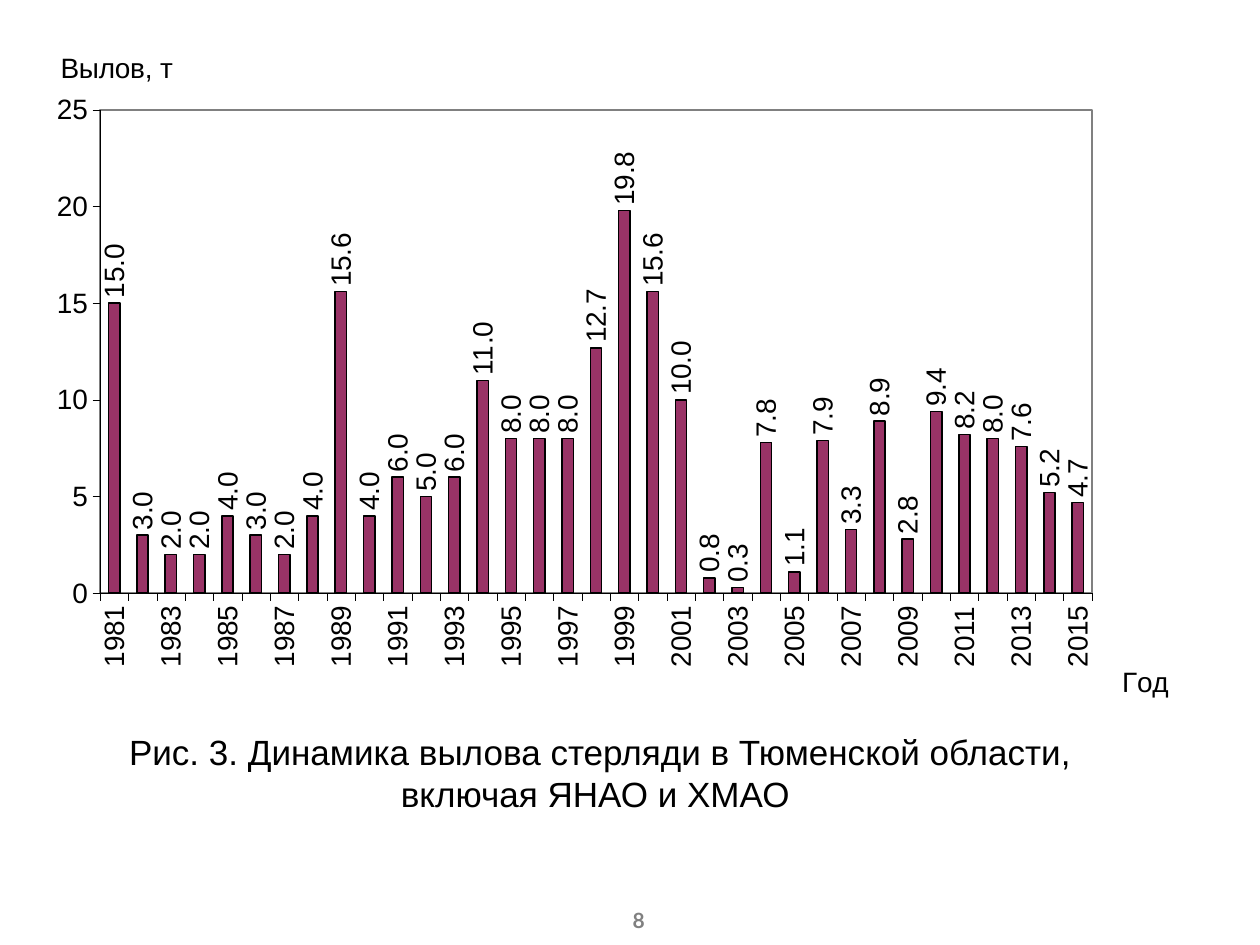
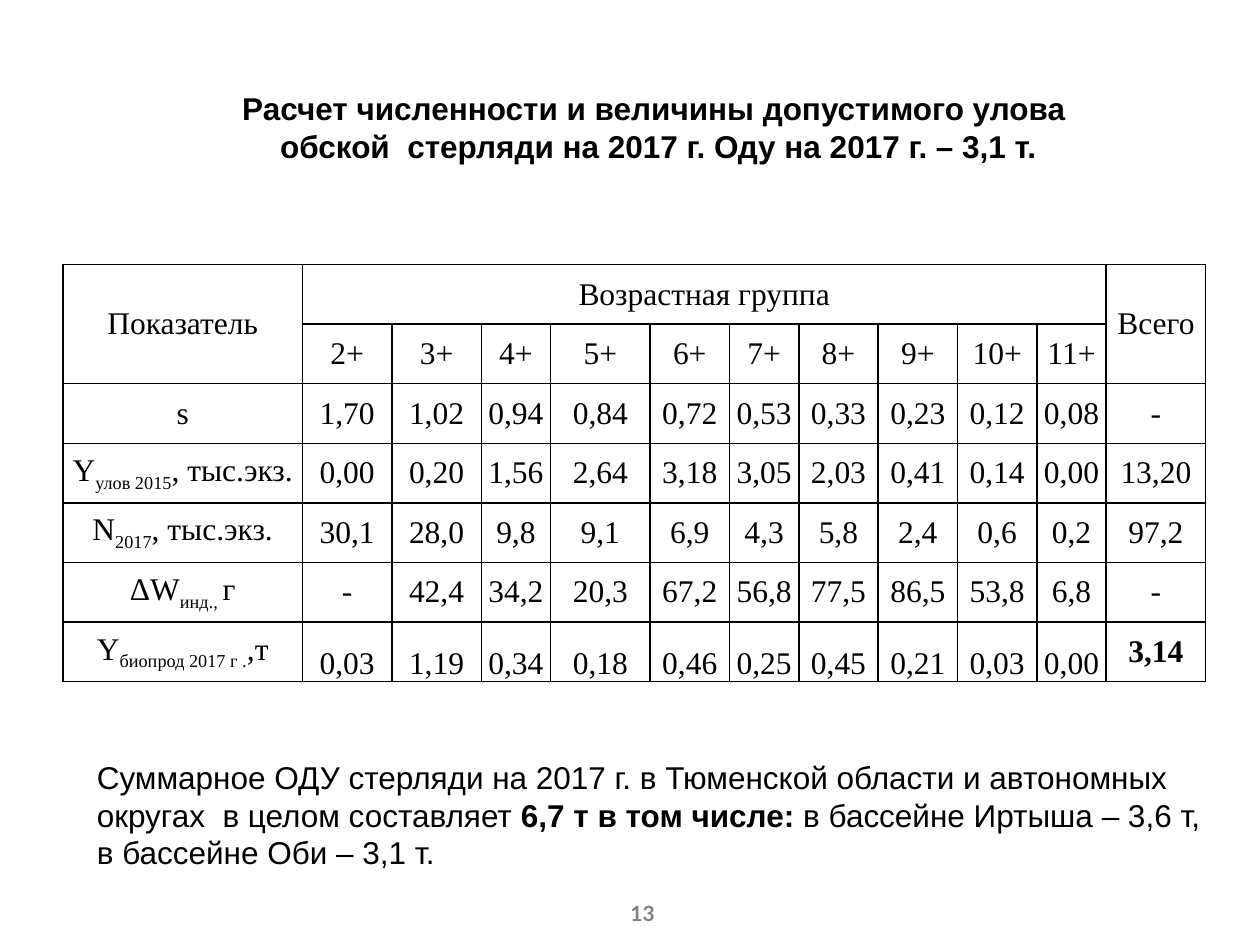
from lxml import etree
from pptx import Presentation
from pptx.chart.data import CategoryChartData
from pptx.dml.color import RGBColor
from pptx.enum.chart import XL_CHART_TYPE, XL_LABEL_POSITION, XL_TICK_MARK
from pptx.enum.text import MSO_ANCHOR, PP_ALIGN
from pptx.oxml import parse_xml
from pptx.oxml.ns import nsdecls, qn
from pptx.util import Inches, Pt

COLUMN = XL_CHART_TYPE.COLUMN_CLUSTERED
OUTSIDE = XL_LABEL_POSITION.OUTSIDE_END
TICK_OUT = XL_TICK_MARK.OUTSIDE
TICK_NONE = XL_TICK_MARK.NONE
MIDDLE, BOTTOM = MSO_ANCHOR.MIDDLE, MSO_ANCHOR.BOTTOM
LEFT, CENTER = PP_ALIGN.LEFT, PP_ALIGN.CENTER

COLORS = {"ink": "000000", "gray": "808080", "bar": "993366", "paper": "FFFFFF"}
SANS, SERIF, PAGE = "Arial", "Times New Roman", "Lato"

FIRST = 1981
CATCH = [15, 3, 2, 2, 4, 3, 2, 4, 15.6, 4, 6, 5, 6, 11, 8, 8, 8, 12.7,
         19.8, 15.6, 10, 0.8, 0.3, 7.8, 1.1, 7.9, 3.3, 8.9, 2.8, 9.4,
         8.2, 8, 7.6, 5.2, 4.7]

WIDTHS = [1.9, 0.71, 0.71, 0.55, 0.79, 0.63, 0.55, 0.63, 0.63, 0.63, 0.55, 0.79]
HEIGHT = 3.31
AGES = [f"{age}+" for age in range(2, 12)]
# Each row: label runs, then values by age and the total
ROWS = [
    (["s"], "1,70 1,02 0,94 0,84 0,72 0,53 0,33 0,23 0,12 0,08 -"),
    (["Y", ("улов 2015", "sub"), ", тыс.экз."],
     "0,00 0,20 1,56 2,64 3,18 3,05 2,03 0,41 0,14 0,00 13,20"),
    (["N", ("2017", "sub"), ", тыс.экз."],
     "30,1 28,0 9,8 9,1 6,9 4,3 5,8 2,4 0,6 0,2 97,2"),
    (["ΔW", ("инд., ", "sub"), "г"],
     "- 42,4 34,2 20,3 67,2 56,8 77,5 86,5 53,8 6,8 -"),
    (["Y", ("биопрод 2017 г .", "sub"), ",т"],
     "0,03 1,19 0,34 0,18 0,46 0,25 0,45 0,21 0,03 0,00 3,14"),
]


def rgb(name):
    return RGBColor.from_string(COLORS[name])


def write(frame, *paras, size=18, font=SANS, color="ink", bold=False, align=CENTER):
    """Fill a frame; a paragraph is a list of strings or (string, style) pairs."""
    for i, runs in enumerate(paras):
        para = frame.add_paragraph() if i else frame.paragraphs[0]
        para.alignment = align
        for part in runs:
            text, style = (part, "") if isinstance(part, str) else part
            run = para.add_run()
            run.text = text
            run.font.size, run.font.name = Pt(size), font
            run.font.bold = bold or style == "bold"
            run.font.color.rgb = rgb(color)
            if style == "sub":
                run.font._element.set("baseline", "-25000")


def set_box(shape, box):
    shape.left, shape.top, shape.width, shape.height = map(Inches, box)
    shape.text_frame.word_wrap = True
    shape.text_frame.vertical_anchor = MIDDLE


def add_title(slide, box, *paras, **style):
    set_box(slide.shapes.title, box)
    write(slide.shapes.title.text_frame, *paras, **style)


def add_text(slide, box, *paras, **style):
    shape = slide.shapes.add_textbox(*map(Inches, box))
    set_box(shape, box)
    write(shape.text_frame, *paras, **style)


def add_page(slide, left, top, number):
    add_text(slide, (left, top, 2, 0.4), [number],
             size=12, font=PAGE, color="gray", bold=True)


# Chart parts
def place(node, index, inner=False, **spots):
    """Give a chart part a manual layout in fractions of the chart."""
    for old in node.findall(qn("c:layout")):
        node.remove(old)
    layout = etree.Element(qn("c:layout"))
    manual = etree.SubElement(layout, qn("c:manualLayout"))
    items = [("layoutTarget", "inner")] if inner else []
    items += [("xMode", "edge"), ("yMode", "edge"), *spots.items()]
    for tag, value in items:
        etree.SubElement(manual, qn(f"c:{tag}")).set("val", str(value))
    node.insert(index, layout)


def turn(holder, angle):
    body = next(holder.iter(qn("a:bodyPr")))
    body.set("rot", str(angle * 60000))
    body.set("vert", "horz")


def set_axis(axis, title, x, y):
    axis.has_major_gridlines = False
    axis.major_tick_mark, axis.minor_tick_mark = TICK_OUT, TICK_NONE
    axis.format.line.color.rgb = rgb("ink")
    axis.format.line.width = Pt(0.23)
    axis.tick_labels.font.size = Pt(16)
    write(axis.axis_title.text_frame, [title], size=16)
    node = axis.axis_title._element
    turn(node, 0)
    place(node, 1, x=x, y=y)


def add_catch(slide, box):
    data = CategoryChartData(number_format="#,##0.0")
    data.categories = [str(FIRST + i) for i in range(len(CATCH))]
    data.add_series("Вылов, т", CATCH)
    chart = slide.shapes.add_chart(COLUMN, *map(Inches, box), data).chart
    chart.has_legend = chart.has_title = False
    chart.font.size, chart.font.name = Pt(16), SANS
    chart.font.color.rgb = rgb("ink")

    # Axes
    years, tons = chart.category_axis, chart.value_axis
    set_axis(years, "Год", 0.94, 0.9)
    set_axis(tons, "Вылов, т", 0.01, 0)
    tons.minimum_scale, tons.maximum_scale, tons.major_unit = 0, 25, 5
    tons.tick_labels.number_format = "0"
    tons.tick_labels.number_format_is_linked = False
    turn(years._element.find(qn("c:txPr")), -90)
    skip = etree.Element(qn("c:tickLblSkip"), val="2")
    years._element.find(qn("c:noMultiLvlLbl")).addprevious(skip)

    # Bars and labels
    plot = chart.plots[0]
    plot.gap_width, plot.vary_by_categories = 150, False
    bars = plot.series[0].format
    bars.fill.solid()
    bars.fill.fore_color.rgb = rgb("bar")
    bars.line.color.rgb = rgb("ink")
    bars.line.width = Pt(0.9)
    plot.has_data_labels = True
    labels = plot.data_labels
    labels.show_value, labels.position = True, OUTSIDE
    labels.number_format, labels.number_format_is_linked = "#,##0.0", False
    labels.font.size = Pt(16)
    turn(labels._element, -90)

    # Plot frame
    area = next(chart._chartSpace.iter(qn("c:plotArea")))
    place(area, 0, inner=True, x=0.049, y=0.095, w=0.869, h=0.709)
    area.append(parse_xml(
        f'<c:spPr {nsdecls("c", "a")}><a:noFill/><a:ln w="12700"><a:solidFill>'
        f'<a:srgbClr val="{COLORS["gray"]}"/></a:solidFill></a:ln></c:spPr>'))


# Table parts
def set_cell(cell, runs, anchor=MIDDLE, bold=False):
    cell.margin_left = cell.margin_right = Inches(0.02)
    cell.margin_top = cell.margin_bottom = 0
    cell.vertical_anchor = anchor
    cell.fill.solid()
    cell.fill.fore_color.rgb = rgb("paper")
    for i, side in enumerate("LRTB"):
        cell._tc.tcPr.insert(i, parse_xml(
            f'<a:ln{side} {nsdecls("a")} w="12700"><a:solidFill>'
            f'<a:srgbClr val="{COLORS["ink"]}"/></a:solidFill></a:ln{side}>'))
    if runs:
        write(cell.text_frame, runs, font=SERIF, bold=bold)


def add_stock(slide, left, top):
    count, last = len(ROWS) + 2, len(WIDTHS) - 1
    table = slide.shapes.add_table(
        count, len(WIDTHS), Inches(left), Inches(top),
        Inches(sum(WIDTHS)), Inches(HEIGHT)).table
    table.first_row = table.horz_banding = False
    for col, width in zip(table.columns, WIDTHS):
        col.width = Inches(width)
    for row in table.rows:
        row.height = Inches(HEIGHT / count)

    # Header spans, then one row per measure
    for start, end in [((0, 0), (1, 0)), ((0, 1), (0, last - 1)), ((0, last), (1, last))]:
        table.cell(*start).merge(table.cell(*end))
    top_row = [["Показатель"], ["Возрастная группа"], *[[]] * (last - 2), ["Всего"]]
    grid = [top_row, [[], *[[age] for age in AGES], []]]
    grid += [[label, *[[value] for value in values.split()]] for label, values in ROWS]
    for r, line in enumerate(grid):
        for c, runs in enumerate(line):
            final = r == count - 1
            low = final and 0 < c < last
            set_cell(table.cell(r, c), runs, BOTTOM if low else MIDDLE,
                     bold=final and c == last)


# Slides
def catch_slide(slide):
    add_catch(slide, (0.35, 0.36, 9.06, 5.41))
    add_title(slide, (0.67, 5.78, 8.11, 0.7),
              [" Рис. 3. Динамика вылова стерляди в Тюменской области, включая ЯНАО и ХМАО"],
              size=20)
    add_page(slide, 4.07, 7.1, "8")


def stock_slide(slide):
    add_title(slide, (0.62, 0.65, 9.21, 0.71),
              ["Расчет численности и величины допустимого улова "],
              ["обской  стерляди на 2017 г. Оду на 2017 г. – 3,1 т."], bold=True)
    add_stock(slide, 0.5, 2.1)
    add_text(slide, (0.67, 5.96, 8.98, 1.01),
             ["Суммарное ОДУ стерляди на 2017 г. в Тюменской области и автономных "
              "округах  в целом составляет ", ("6,7 т в том числе: ", "bold"),
              "в бассейне Иртыша – 3,6 т, в бассейне Оби – 3,1 т."], align=LEFT)
    add_page(slide, 4.1, 7.05, "13")


def main():
    deck = Presentation()
    deck.slide_width, deck.slide_height = Inches(10), Inches(7.5)
    title_only = deck.slide_layouts[5]
    for build in (catch_slide, stock_slide):
        build(deck.slides.add_slide(title_only))
    deck.save("out.pptx")


if __name__ == "__main__":
    main()
